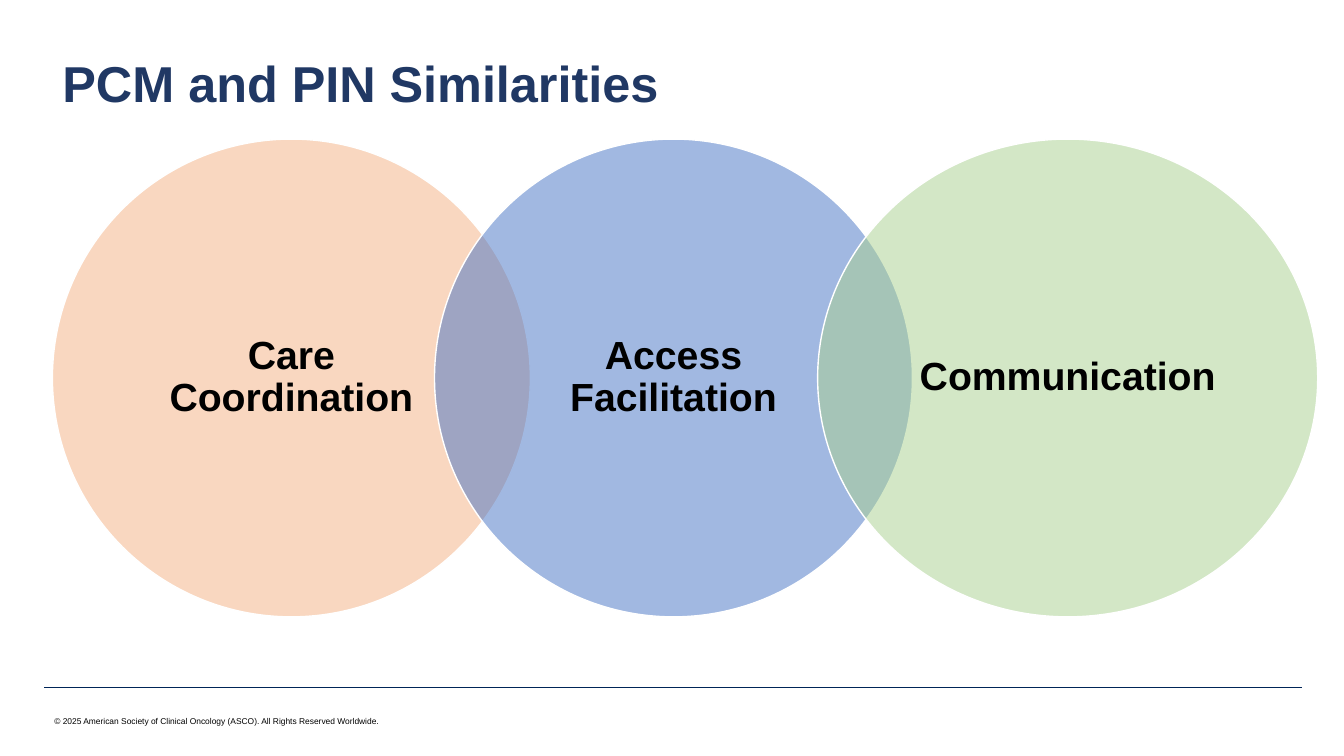
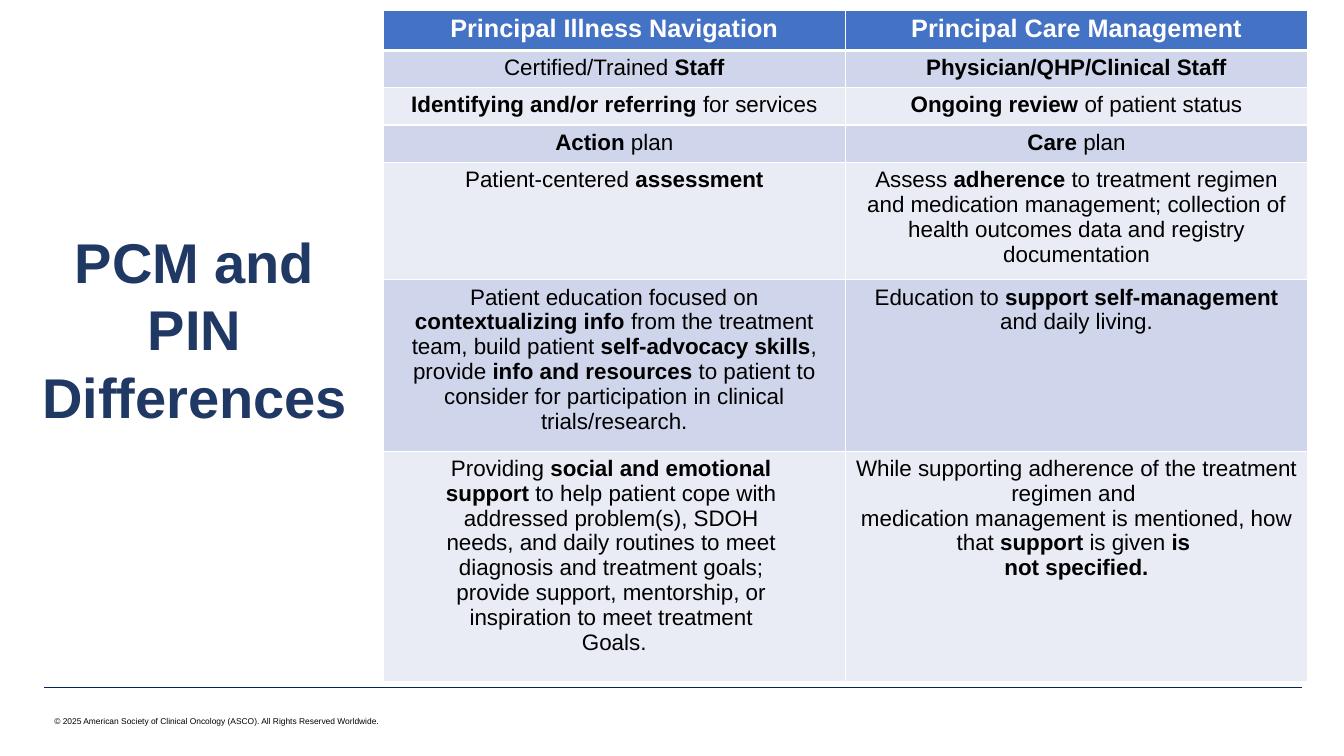
import dataclasses

import lxml.etree
import pptx
import pptx.dml.color
import pptx.enum.shapes
import pptx.enum.text
import pptx.oxml.ns
import pptx.util

Inches = pptx.util.Inches
Pt = pptx.util.Pt
ALIGN = pptx.enum.text.PP_ALIGN
ANCHOR = pptx.enum.text.MSO_ANCHOR
qn = pptx.oxml.ns.qn


@dataclasses.dataclass(frozen=True)
class Theme:
    font: str = "Arial"
    title: str = "203864"
    text: str = "000000"
    white: str = "FFFFFF"
    rule: str = "002557"
    header: str = "4472C4"
    bands: tuple = ("CFD5EA", "E9EBF5")
    circles: tuple = ("F4B183", "4472C4", "A9D18E")
    footer_size: float = 6
    body_size: float = 16
    header_size: float = 18
    circle_size: float = 28
    title_size: float = 36
    side_title_size: float = 40


THEME = Theme()
COPYRIGHT = ("© 2025 American Society of Clinical Oncology (ASCO). "
             "All Rights Reserved Worldwide.")

# Left, width and label of each circle
SIMILARITIES = [
    (0.52, 4.74, "Care Coordination"),
    (4.31, 4.74, "Access Facilitation"),
    (8.11, 4.96, "Communication"),
]

# Words between double asterisks are bold
DIFFERENCES = [
    ("**Principal Illness Navigation**", "**Principal Care Management**"),
    ("Certified/Trained **Staff**", "**Physician/QHP/Clinical Staff**"),
    ("**Identifying and/or referring **for services",
     "**Ongoing review **of patient status"),
    ("**Action** plan", "**Care** plan"),
    ("Patient-centered **assessment**",
     "Assess **adherence** to treatment regimen and medication management; "
     "collection of health outcomes data and registry documentation"),
    ("Patient education focused on **contextualizing info **from the treatment "
     "team, build patient **self-advocacy skills**, provide **info and resources "
     "**to patient to consider for participation in clinical trials/research.",
     "Education to **support self-management **and daily living."),
    ("Providing **social and emotional **\n"
     "**support** to help patient cope with \n"
     "addressed problem(s), SDOH \n"
     "needs, and daily routines to meet \n"
     "diagnosis and treatment goals; \n"
     "provide support, mentorship, or \n"
     "inspiration to meet treatment \n"
     "Goals.",
     "While supporting adherence of the treatment regimen and \n"
     "medication management is mentioned, how that **support** is given **is **\n"
     "**not specified.**"),
]
ROW_HEIGHTS = (0.38, 0.37, 0.37, 0.37, 1.11, 1.62, 2.29)


def rgb(color):
    return pptx.dml.color.RGBColor.from_string(color)


def style_run(run, size, color, bold):
    run.font.name = THEME.font
    run.font.size = Pt(size)
    run.font.color.rgb = rgb(color)
    run.font.bold = bold


def write_marked(frame, marked, size, color, align=ALIGN.LEFT):
    """Fill a text frame: one paragraph a line, bold between double asterisks."""
    for number, line in enumerate(marked.split("\n")):
        paragraph = frame.add_paragraph() if number else frame.paragraphs[0]
        paragraph.alignment = align
        for position, words in enumerate(line.split("**")):
            if words:
                run = paragraph.add_run()
                run.text = words
                style_run(run, size, color, position % 2 == 1)


def add_text(slide, box, marked, size, color, align=ALIGN.LEFT, wrap=True):
    frame = slide.shapes.add_textbox(*map(Inches, box)).text_frame
    frame.word_wrap = wrap
    write_marked(frame, marked, size, color, align)


def add_title(slide, box, title, size, align=ALIGN.LEFT):
    add_text(slide, box, f"**{title}**", size, THEME.title, align)


def add_footer(slide):
    rule = slide.shapes.add_connector(
        pptx.enum.shapes.MSO_CONNECTOR.STRAIGHT,
        Inches(0.44), Inches(6.82), Inches(12.91), Inches(6.82))
    rule.line.color.rgb = rgb(THEME.rule)
    rule.line.width = Pt(0.25)
    lxml.etree.SubElement(rule._element.spPr, qn("a:effectLst"))
    add_text(slide, (0.44, 7.06, 3.5, 0.2), COPYRIGHT,
             THEME.footer_size, THEME.text, wrap=False)


def add_circle(slide, box, label, color):
    """Add a half-transparent circle with a bold label in its middle."""
    circle = slide.shapes.add_shape(
        pptx.enum.shapes.MSO_SHAPE.OVAL, *map(Inches, box))
    circle.shadow.inherit = False
    circle.fill.solid()
    circle.fill.fore_color.rgb = rgb(color)
    fill_color = circle._element.spPr.find(qn("a:solidFill")).find(qn("a:srgbClr"))
    lxml.etree.SubElement(fill_color, qn("a:alpha"), val="50000")
    circle.line.color.rgb = rgb(THEME.white)
    circle.line.width = Pt(1)

    frame = circle.text_frame
    frame.word_wrap = True
    frame.vertical_anchor = ANCHOR.MIDDLE
    frame.margin_left = frame.margin_right = Inches(0.26)
    frame.margin_top = frame.margin_bottom = Inches(0.04)
    write_marked(frame, f"**{label}**", THEME.circle_size, THEME.text, ALIGN.CENTER)
    frame.paragraphs[0].line_spacing = 0.9


def set_borders(cell, top=1, bottom=1):
    properties = cell._tc.get_or_add_tcPr()
    for side, width in (("L", 1), ("R", 1), ("T", top), ("B", bottom)):
        border = lxml.etree.SubElement(
            properties, qn(f"a:ln{side}"), w=str(Pt(width)))
        fill = lxml.etree.SubElement(border, qn("a:solidFill"))
        lxml.etree.SubElement(fill, qn("a:srgbClr"), val=THEME.white)


def add_comparison(slide, box, rows, heights):
    """Add a table with a header row and banded rows below it."""
    table = slide.shapes.add_table(
        len(rows), len(rows[0]), *map(Inches, box)).table
    for column in table.columns:
        column.width = Inches(box[2] / len(rows[0]))
    for index, (entries, height) in enumerate(zip(rows, heights)):
        table.rows[index].height = Inches(height)
        is_header = index == 0
        fill = THEME.header if is_header else THEME.bands[(index - 1) % 2]
        size = THEME.header_size if is_header else THEME.body_size
        color = THEME.white if is_header else THEME.text
        for column, entry in enumerate(entries):
            cell = table.cell(index, column)
            set_borders(cell, top=3 if index == 1 else 1,
                        bottom=3 if is_header else 1)
            cell.fill.solid()
            cell.fill.fore_color.rgb = rgb(fill)
            write_marked(cell.text_frame, entry, size, color, ALIGN.CENTER)


def add_slide(deck):
    slide = deck.slides.add_slide(deck.slide_layouts[6])
    add_footer(slide)
    return slide


def build_similarities(deck):
    slide = add_slide(deck)
    for (left, width, label), color in zip(SIMILARITIES, THEME.circles):
        add_circle(slide, (left, 1.38, width, 4.74), label, color)
    add_title(slide, (0.52, 0.47, 6.54, 0.71), "PCM and PIN Similarities",
              THEME.title_size)


def build_differences(deck):
    slide = add_slide(deck)
    add_comparison(slide, (3.8, 0.1, 9.17, sum(ROW_HEIGHTS)),
                   DIFFERENCES, ROW_HEIGHTS)
    add_title(slide, (0.2, 2.21, 3.46, 2.12), "PCM and PIN Differences",
              THEME.side_title_size, ALIGN.CENTER)


def main():
    deck = pptx.Presentation()
    deck.slide_width = Inches(13.33)
    deck.slide_height = Inches(7.5)
    build_similarities(deck)
    build_differences(deck)
    deck.save("out.pptx")


if __name__ == "__main__":
    main()
